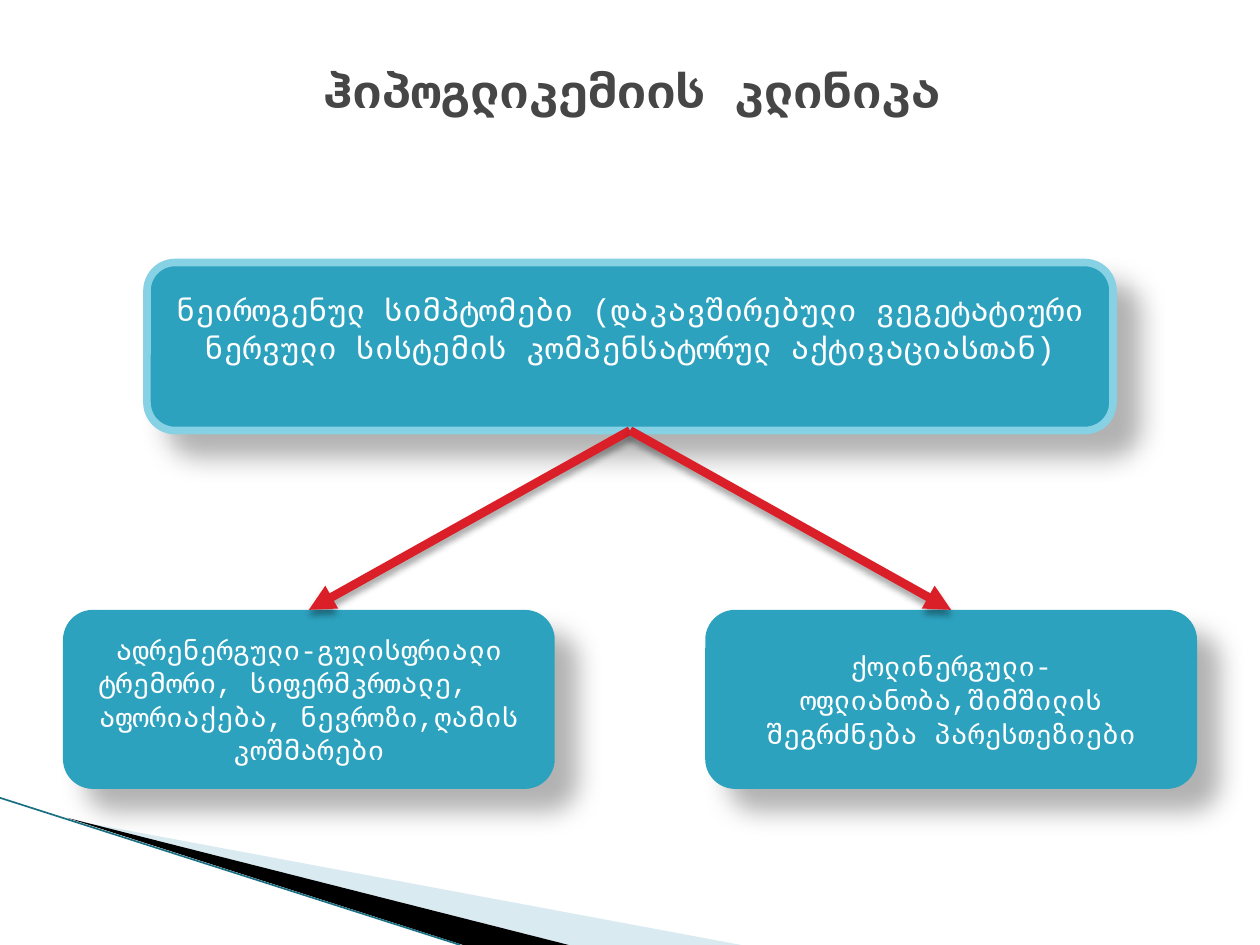
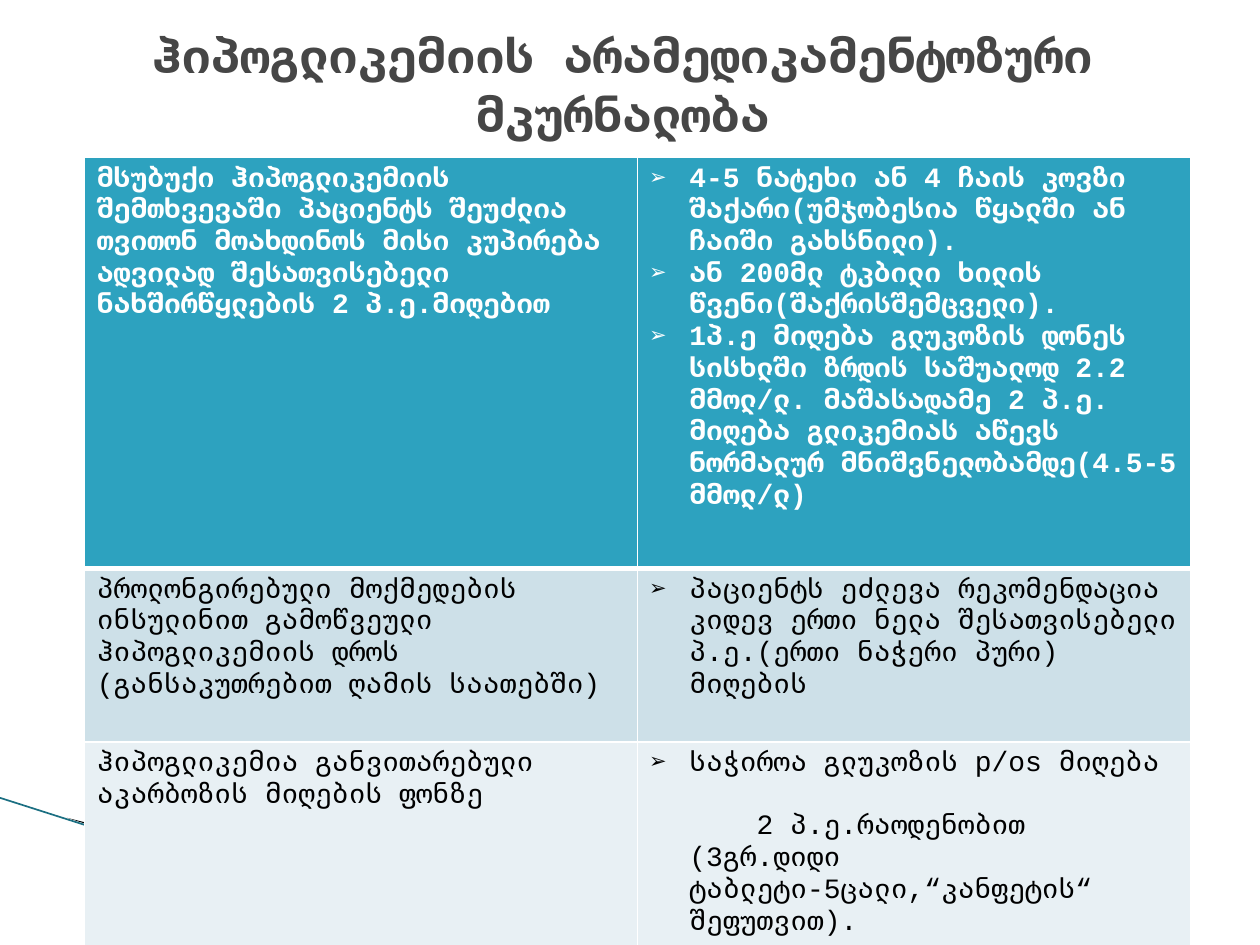
from lxml import etree
from pptx import Presentation
from pptx.dml.color import RGBColor
from pptx.enum.shapes import MSO_CONNECTOR, MSO_SHAPE
from pptx.enum.text import MSO_ANCHOR, PP_ALIGN
from pptx.oxml.ns import qn
from pptx.util import Pt

FONT = "Courier New"
TEAL, PALE_TEAL, RED = "2DA2BF", "87D1E4", "DA1F28"
WHITE, BLACK, GREY = "FFFFFF", "000000", "464646"
BOX_SHADOW = (30, 15, 18, 45)
ARROW_SHADOW = (35, 4, 3, 90)


def rgb(value):
    """Turn a hex string into a colour."""
    return RGBColor.from_string(value)


def sub(parent, tag, **attrs):
    """Append a drawing element with the given attributes."""
    el = etree.SubElement(parent, qn("a:" + tag))
    for name, value in attrs.items():
        el.set(name, str(value))
    return el


class Deck:
    """Presentation style together with the current slide."""

    def __init__(self):
        """Open a 10 by 7.5 inch presentation."""
        self.prs = Presentation()
        self.prs.slide_width, self.prs.slide_height = Pt(720), Pt(540)
        self.s = None

    def slide(self, title, x, y, w, h):
        """Start a slide with the corner bands and a title."""
        self.s = self.prs.slides.add_slide(self.prs.slide_layouts[6])
        self.band([(39.6, 468.4), (423.4, 540), (325, 540)],
                  (56, 394, 299.5, 114), "A0CBDC", 40)
        self.band([(38.2, 467.3), (325, 540), (264.6, 540)],
                  (-4.3, 455.8, 299.5, 66.2), BLACK)
        self.line(0, 455.9, 263, 540, "1B6F82", 0.95)
        tf = self.s.shapes.add_textbox(Pt(x), Pt(y), Pt(w), Pt(h)).text_frame
        tf.word_wrap, tf.vertical_anchor = True, MSO_ANCHOR.MIDDLE
        self.text(tf.paragraphs[0], title, 28, GREY, True, PP_ALIGN.CENTER)

    def text(self, p, text, size, color, bold=False, align=PP_ALIGN.LEFT):
        """Write one styled paragraph."""
        p.text, p.alignment = text, align
        p.font.name, p.font.size, p.font.bold = FONT, Pt(size), bold
        p.font.color.rgb = rgb(color)

    def shadow(self, sp, shadow=None):
        """Give a shape an outer shadow, or none."""
        effects = sub(sp._element.spPr, "effectLst")
        if shadow:
            alpha, blur, dist, angle = shadow
            outer = sub(effects, "outerShdw", blurRad=Pt(blur), dist=Pt(dist),
                        dir=angle * 60000, algn="tl", rotWithShape=0)
            sub(sub(outer, "srgbClr", val=BLACK), "alpha", val=alpha * 1000)

    def band(self, points, frame, color, opacity=100):
        """Draw a filled outline through the points, held by a frame."""
        points = [(Pt(x), Pt(y)) for x, y in points]
        x, y, w, h = map(Pt, frame)
        fb = self.s.shapes.build_freeform(*points[0])
        fb.add_line_segments(points[1:], close=True)
        sp = fb.convert_to_shape()
        outline = sp._element.spPr.find(".//" + qn("a:path"))
        outline.set("w", str(w))
        outline.set("h", str(h))
        for pt, (px, py) in zip(outline.iter(qn("a:pt")), points):
            pt.set("x", str(px - x))
            pt.set("y", str(py - y))
        sp.left, sp.top, sp.width, sp.height = x, y, w, h
        sp.fill.solid()
        sp.fill.fore_color.rgb = rgb(color)
        if opacity < 100:
            clr = sp._element.spPr.find(qn("a:solidFill"))[0]
            sub(clr, "alpha", val=opacity * 1000)
        sp.line.fill.background()
        self.shadow(sp)

    def line(self, x1, y1, x2, y2, color, width, shadow=None, arrow=False):
        """Draw a straight line, with an arrowhead if asked."""
        cn = self.s.shapes.add_connector(
            MSO_CONNECTOR.STRAIGHT, Pt(x1), Pt(y1), Pt(x2), Pt(y2))
        cn.line.color.rgb, cn.line.width = rgb(color), Pt(width)
        if arrow:
            sub(cn.line._get_or_add_ln(), "tailEnd", type="triangle")
        self.shadow(cn, shadow)

    def box(self, parts, x, y, w, h, size, outline=None, bottom=3.6):
        """Draw a rounded box with centred (text, right indent) parts."""
        sp = self.s.shapes.add_shape(
            MSO_SHAPE.ROUNDED_RECTANGLE, Pt(x), Pt(y), Pt(w), Pt(h))
        sp.fill.solid()
        sp.fill.fore_color.rgb = rgb(TEAL)
        if outline:
            sp.line.color.rgb, sp.line.width = rgb(outline), Pt(4.33)
        else:
            sp.line.fill.background()
        self.shadow(sp, BOX_SHADOW)
        tf = sp.text_frame
        tf.word_wrap, tf.vertical_anchor = True, MSO_ANCHOR.MIDDLE
        tf.margin_bottom = Pt(bottom)
        for n, (text, indent) in enumerate(parts):
            p = tf.add_paragraph() if n else tf.paragraphs[0]
            p._p.get_or_add_pPr().set("marR", str(Pt(indent)))
            self.text(p, text, size, WHITE, align=PP_ALIGN.CENTER)

    def bullet(self, p, char="➢", first=-22.5):
        """Set the list indent and the bullet sign."""
        pPr = p._p.get_or_add_pPr()
        pPr.set("marL", str(Pt(22.5)))
        pPr.set("indent", str(Pt(first)))
        if char:
            sub(pPr, "buFont", typeface=FONT)
            sub(pPr, "buChar", char=char)
        else:
            sub(pPr, "buNone")

    def cell(self, cell, fill, top, bottom):
        """Set the borders and the fill of a cell."""
        tcPr = cell._tc.get_or_add_tcPr()
        for side, width in zip("LRTB", (1, 1, top, bottom)):
            ln = sub(tcPr, "ln" + side, w=Pt(width))
            sub(sub(ln, "solidFill"), "srgbClr", val=WHITE)
        cell.fill.solid()
        cell.fill.fore_color.rgb = rgb(fill)

    def table(self, rows, x, y, col_width, heights, fills):
        """Draw a table of a situation and its bulleted measures."""
        tb = self.s.shapes.add_table(len(rows), 2, Pt(x), Pt(y),
                                     Pt(2 * col_width), Pt(sum(heights))).table
        for col in tb.columns:
            col.width = Pt(col_width)
        for i, (situation, measures, follow_up) in enumerate(rows):
            tb.rows[i].height = Pt(heights[i])
            left, right = tb.cell(i, 0), tb.cell(i, 1)
            for c in (left, right):
                self.cell(c, fills[i], 3 if i == 1 else 1, 3 if i == 0 else 1)
            style = (16, BLACK if i else WHITE, i == 0)
            self.text(left.text_frame.paragraphs[0], situation, *style)
            tf = right.text_frame
            for n, measure in enumerate(measures):
                p = tf.add_paragraph() if n else tf.paragraphs[0]
                self.bullet(p)
                self.text(p, measure, *style)
            if follow_up:
                p = tf.add_paragraph()
                self.bullet(p, None, 38.4)
                p.space_before = Pt(18)
                self.text(p, follow_up, *style)


def clinic(d):
    """Build the slide with the symptom tree."""
    d.slide("ჰიპოგლიკემიის კლინიკა", 36, 0, 650, 102)
    d.box([("ნეიროგენულ სიმპტომები (დაკავშირებული ვეგეტატიური ნერვული "
            "სისტემის კომპენსატორულ აქტივაციასთან)", 0)],
          84, 150, 552, 96, 18, PALE_TEAL, 25)
    branches = [
        (36, [("ადრენერგული-გულისფრიალი", 0),
              ("ტრემორი, სიფერმკრთალე,", 29),
              ("აფორიაქება, ნევროზი,ღამის კოშმარები", 0)]),
        (403, [("ქოლინერგული- ოფლიანობა,შიმშილის შეგრძნება "
                "პარესთეზიები", 0)]),
    ]
    for x, parts in branches:
        d.box(parts, x, 348.5, 281, 102.3, 16)
    for x, _ in branches:
        d.line(360, 246, x + 140.5, 348.5, RED, 5, ARROW_SHADOW, True)


def treatment(d):
    """Build the slide with the treatment table."""
    d.slide("ჰიპოგლიკემიის არამედიკამენტოზური მკურნალობა", 36, 0, 639.5, 95)
    rows = [
        ("მსუბუქი ჰიპოგლიკემიის შემთხვევაში პაციენტს შეუძლია თვითონ "
         "მოახდინოს მისი კუპირება ადვილად შესათვისებელი ნახშირწყლების "
         "2 პ.ე.მიღებით",
         ["4-5 ნატეხი ან 4 ჩაის კოვზი შაქარი(უმჯობესია წყალში ან ჩაიში "
          "გახსნილი).",
          "ან 200მლ ტკბილი ხილის წვენი(შაქრისშემცველი).",
          "1პ.ე მიღება გლუკოზის დონეს სისხლში ზრდის საშუალოდ 2.2 მმოლ/ლ. "
          "მაშასადამე 2 პ.ე. მიღება გლიკემიას აწევს ნორმალურ "
          "მნიშვნელობამდე(4.5-5 მმოლ/ლ)"], None),
        ("პროლონგირებული მოქმედების ინსულინით გამოწვეული ჰიპოგლიკემიის "
         "დროს (განსაკუთრებით ღამის საათებში)",
         ["პაციენტს ეძლევა რეკომენდაცია კიდევ ერთი ნელა შესათვისებელი "
          "პ.ე.(ერთი ნაჭერი პური) მიღების"], None),
        ("ჰიპოგლიკემია განვითარებული აკარბოზის მიღების ფონზე",
         ["საჭიროა გლუკოზის p/os მიღება"],
         "2 პ.ე.რაოდენობით (3გრ.დიდი ტაბლეტი-5ცალი,“კანფეტის“ შეფუთვით)."),
    ]
    d.table(rows, 48.2, 90, 316.1, (234.9, 99.2, 99.2),
            (TEAL, "CDE0E8", "E8F0F4"))


def main():
    """Build and save the presentation."""
    d = Deck()
    clinic(d)
    treatment(d)
    d.prs.save("out.pptx")


if __name__ == "__main__":
    main()
